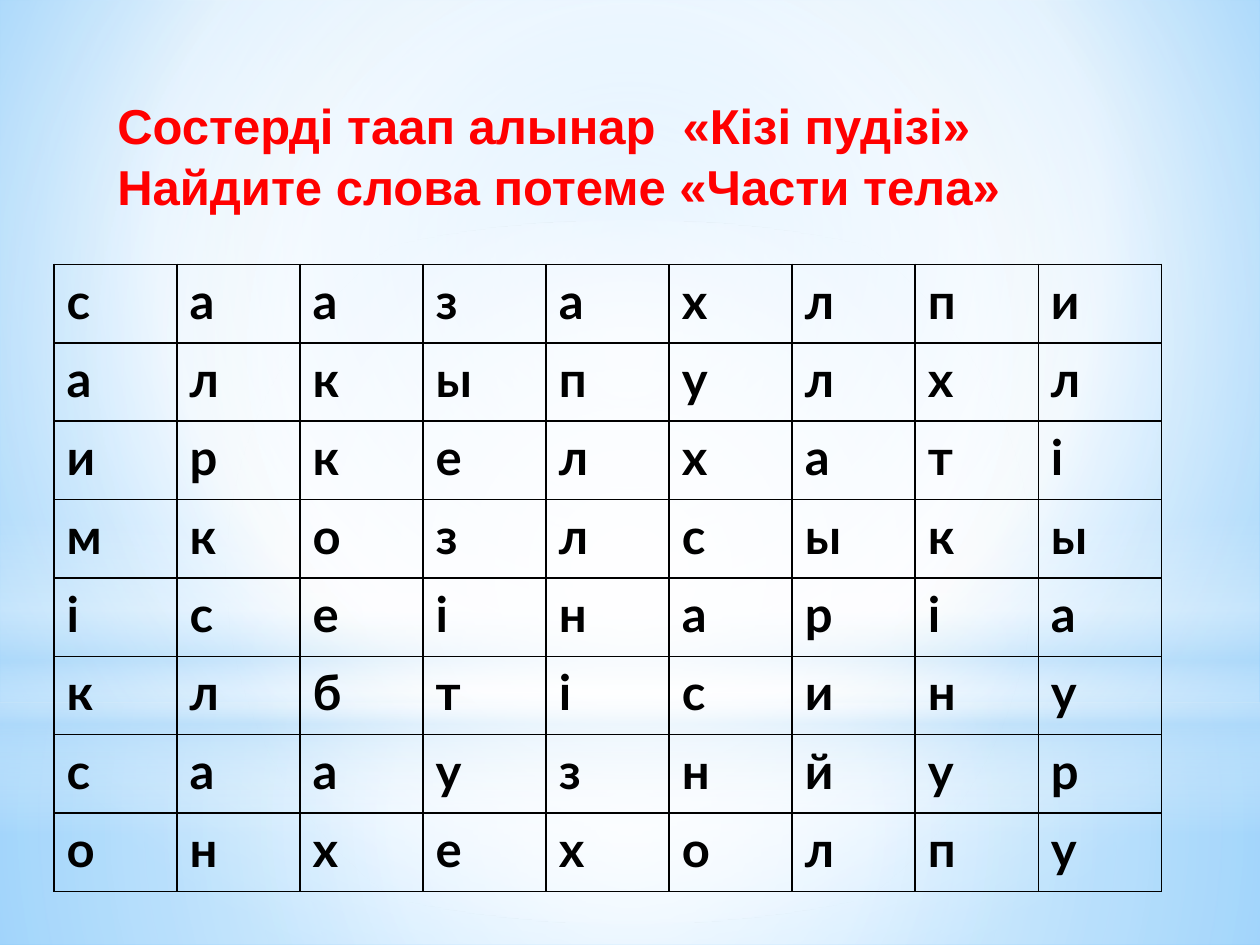
from dataclasses import dataclass

from lxml import etree
from pptx import Presentation
from pptx.dml.color import RGBColor
from pptx.enum.shapes import MSO_SHAPE
from pptx.enum.text import MSO_ANCHOR, PP_ALIGN
from pptx.oxml.ns import qn
from pptx.util import Cm, Pt

RECTANGLE, OVAL = MSO_SHAPE.RECTANGLE, MSO_SHAPE.OVAL
TOP, LEFT = MSO_ANCHOR.TOP, PP_ALIGN.LEFT

RED = RGBColor(0xFF, 0x00, 0x00)
BLACK = RGBColor(0x00, 0x00, 0x00)
WHITE = RGBColor(0xFF, 0xFF, 0xFF)
PALE_BLUE = RGBColor(0xB4, 0xDC, 0xFA)
SKY = RGBColor(0x9E, 0xD5, 0xFF)
DEEP_SKY = RGBColor(0x5B, 0xB9, 0xFF)

SLIDE_WIDTH, SLIDE_HEIGHT = 25.4, 19.05
HEADING = "Состердi таап алынар  «Кiзi пудiзi» Найдите слова потеме «Части тела»"
LETTER_ROWS = [
    "cаазахлпи",
    "алкыпулхл",
    "иркелхатi",
    "мкoзлсыкы",
    "iсеiнарiа",
    "клбтiсину",
    "сааузнйур",
    "онхехолпу",
]


@dataclass(frozen=True)
class Stop:
    position: int
    color: RGBColor
    opacity: int = 100


@dataclass(frozen=True)
class Glow:
    preset: MSO_SHAPE
    top: float
    height: float
    stops: tuple[Stop, ...]
    focus: tuple[int, ...] | None = (50, 50, 50, 50)


GLOWS = [
    Glow(RECTANGLE, 14.17, 4.88,
         (Stop(0, WHITE, 91), Stop(37, WHITE, 76), Stop(100, PALE_BLUE, 79))),
    Glow(RECTANGLE, 0, 14.17,
         (Stop(0, WHITE, 89), Stop(48, WHITE, 62), Stop(100, PALE_BLUE, 79))),
    Glow(RECTANGLE, 10.46, 6.35,
         (Stop(0, WHITE, 0), Stop(29, WHITE, 30), Stop(45, PALE_BLUE, 40),
          Stop(55, WHITE, 26), Stop(65, PALE_BLUE, 60), Stop(100, WHITE, 0)),
         focus=None),
    Glow(OVAL, 4.45, 14.17, (Stop(0, WHITE), Stop(56, WHITE, 0))),
]


def add_node(parent, tag: str, **attributes):
    values = {name: str(value) for name, value in attributes.items()}
    return etree.SubElement(parent, qn(tag), values)


def set_gradient(owner, fill, stops, focus) -> None:
    """Radial gradient around focus, or a vertical one without it."""
    fill.solid()
    fill.fore_color.rgb = WHITE
    solid = owner.find(".//" + qn("a:solidFill"))
    gradient = etree.Element(qn("a:gradFill"), {"rotWithShape": "1"})
    stop_list = add_node(gradient, "a:gsLst")
    for stop in stops:
        node = add_node(stop_list, "a:gs", pos=stop.position * 1000)
        color = add_node(node, "a:srgbClr", val=stop.color)
        if stop.opacity < 100:
            add_node(color, "a:alpha", val=stop.opacity * 1000)
    if focus:
        path = add_node(gradient, "a:path", path="circle")
        sides = {side: value * 1000 for side, value in zip("ltrb", focus)}
        add_node(path, "a:fillToRect", **sides)
    else:
        add_node(gradient, "a:lin", ang=90 * 60000, scaled=0)
    solid.getparent().replace(solid, gradient)


def add_glow(slide, glow: Glow) -> None:
    shape = slide.shapes.add_shape(
        glow.preset, 0, Cm(glow.top), Cm(SLIDE_WIDTH), Cm(glow.height))
    shape.shadow.inherit = False
    shape.line.fill.background()
    set_gradient(shape.element, shape.fill, glow.stops, glow.focus)


def write_text(frame, text: str, *, font: str, color: RGBColor,
               size: float = 28, bold: bool = True,
               line_spacing: float = 1.0) -> None:
    paragraph = frame.paragraphs[0]
    paragraph.alignment = LEFT
    paragraph.line_spacing = line_spacing
    run = paragraph.add_run()
    run.text = text
    run.font.name = font
    run.font.size = Pt(size)
    run.font.bold = bold
    run.font.color.rgb = color


def set_borders(cell, color: RGBColor, width: float) -> None:
    properties = cell._tc.get_or_add_tcPr()
    for index, side in enumerate(("a:lnL", "a:lnR", "a:lnT", "a:lnB")):
        border = etree.Element(qn(side), {"w": str(Pt(width))})
        add_node(add_node(border, "a:solidFill"), "a:srgbClr", val=color)
        properties.insert(index, border)


def add_letter_grid(slide, rows: list[str]) -> None:
    column_width, row_height = Cm(2.48), Cm(1.58)
    column_count = len(rows[0])
    grid = slide.shapes.add_table(
        len(rows), column_count, Cm(1.09), Cm(5.33),
        column_width * column_count, row_height * len(rows)).table
    grid.first_row = False
    grid.horz_banding = False
    for row_index, letters in enumerate(rows):
        for column_index, letter in enumerate(letters):
            cell = grid.cell(row_index, column_index)
            cell.fill.background()
            set_borders(cell, BLACK, 1)
            write_text(cell.text_frame, letter, font="Lato", color=BLACK)


def add_heading(slide) -> None:
    heading = slide.shapes.title
    heading.left, heading.top = Cm(2.11), Cm(1.73)
    heading.width, heading.height = Cm(21.41), Cm(2.64)
    heading.text_frame.word_wrap = True
    heading.text_frame.vertical_anchor = TOP
    write_text(heading.text_frame, HEADING, font="Arial", color=RED,
               line_spacing=1.05)
    # Bring the heading in front of the glows
    slide.shapes.element.append(heading.element)


def main() -> None:
    deck = Presentation()
    deck.slide_width, deck.slide_height = Cm(SLIDE_WIDTH), Cm(SLIDE_HEIGHT)
    slide = deck.slides.add_slide(deck.slide_layouts.get_by_name("Title Only"))

    # Sky background and its glows
    sky_stops = (Stop(0, SKY), Stop(60, WHITE), Stop(100, DEEP_SKY))
    set_gradient(slide.element, slide.background.fill, sky_stops,
                 (20, 10, 20, 60))
    for glow in GLOWS:
        add_glow(slide, glow)

    # Word search and its task
    add_letter_grid(slide, LETTER_ROWS)
    add_heading(slide)
    deck.save("out.pptx")


if __name__ == "__main__":
    main()
